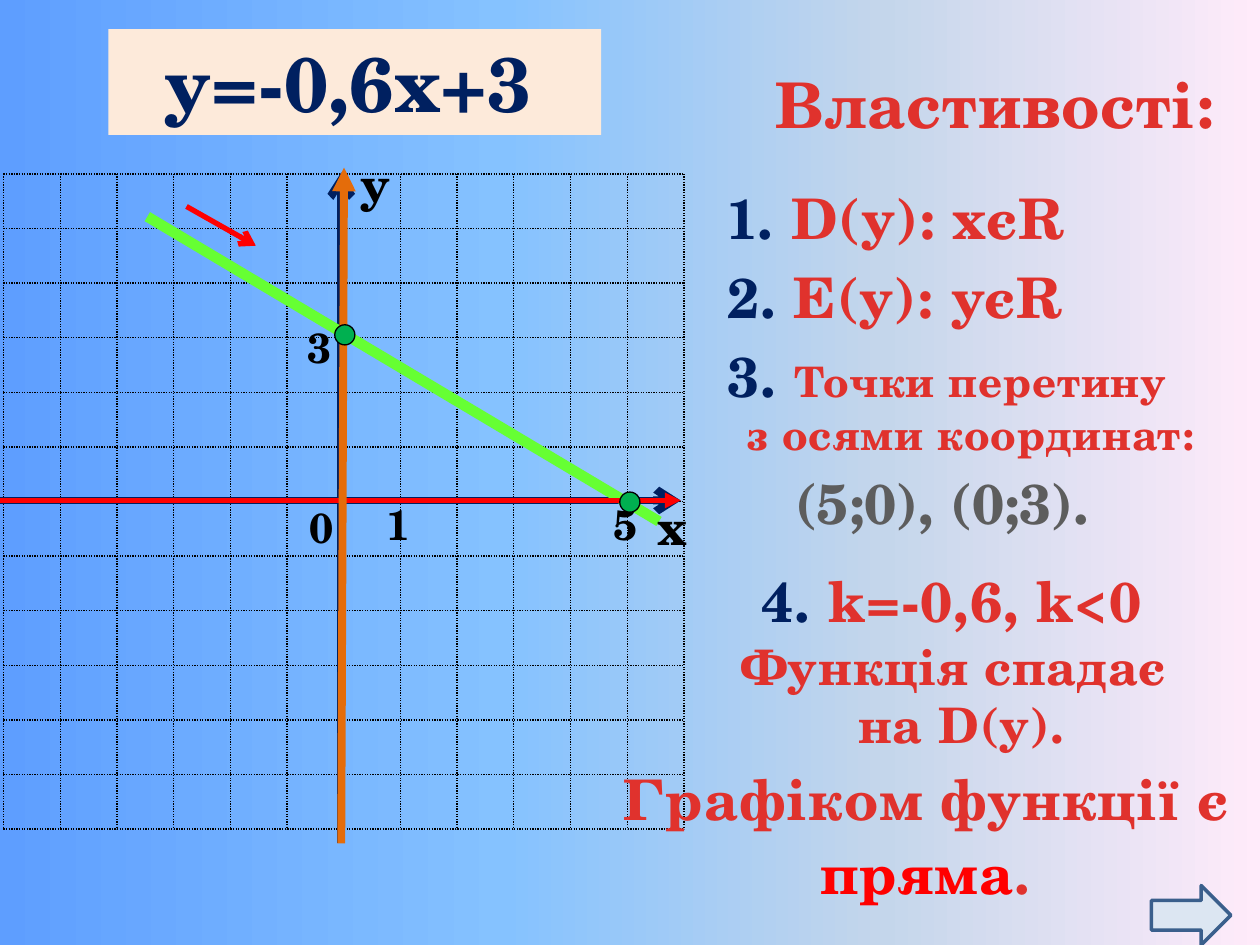
from lxml import etree
from pptx import Presentation
from pptx.dml.color import RGBColor
from pptx.enum.dml import MSO_LINE
from pptx.enum.shapes import MSO_CONNECTOR, MSO_SHAPE
from pptx.enum.text import MSO_ANCHOR, MSO_AUTO_SIZE, PP_ALIGN
from pptx.oxml.ns import qn
from pptx.util import Pt

STRAIGHT = MSO_CONNECTOR.STRAIGHT
DOT = MSO_SHAPE.FLOWCHART_CONNECTOR
RIGHT_ARROW = MSO_SHAPE.RIGHT_ARROW
TOP = MSO_ANCHOR.TOP
NO_FIT = MSO_AUTO_SIZE.NONE
LEFT, CENTER = PP_ALIGN.LEFT, PP_ALIGN.CENTER
DOTTED = MSO_LINE.ROUND_DOT

BLACK, NAVY, CRIMSON, RED, GRAY = "000000", "002060", "E0322D", "FF0000", "5D5D5D"
SKY = [(0, "5E9EFF"), (40, "85C2FF"), (70, "C4D6EB"), (100, "FFEBFA")]


def rgb(value):
    return RGBColor.from_string(value)


class Board:
    font = "TeX Gyre Schola"

    def __init__(self, prs):
        self.s = prs.slides.add_slide(prs.slide_layouts[5])

    def background(self, stops):
        fill = self.s.background.fill
        fill.gradient()
        fill.gradient_angle = 0
        gs_lst = next(self.s.element.iter(qn("a:gsLst")))
        for gs in list(gs_lst):
            gs_lst.remove(gs)
        for pos, color in stops:
            gs = etree.SubElement(gs_lst, qn("a:gs"), pos=str(pos * 1000))
            etree.SubElement(gs, qn("a:srgbClr"), val=color)

    def set_text(self, tf, paragraphs, align, wrap, indents=(), spacing=0):
        frame = dict(word_wrap=wrap, auto_size=NO_FIT, vertical_anchor=TOP,
                     margin_left=Pt(7.2), margin_right=Pt(7.2),
                     margin_top=Pt(3.6), margin_bottom=Pt(3.6))
        for name, value in frame.items():
            setattr(tf, name, value)
        for i, runs in enumerate(paragraphs):
            p = tf.add_paragraph() if i else tf.paragraphs[0]
            p.alignment = align
            if indents:
                p._p.get_or_add_pPr().set("marL", str(Pt(indents[i])))
            for text, size, color in runs:
                r = p.add_run()
                r.text = text
                style = dict(name=self.font, size=Pt(size), bold=True)
                for name, value in style.items():
                    setattr(r.font, name, value)
                r.font.color.rgb = rgb(color)
                if spacing:
                    r._r.get_or_add_rPr().set("spc", str(spacing))

    def title(self, box, text, size, color, fill, indent):
        sp = self.s.shapes.title
        for name, value in zip(("left", "top", "width", "height"), box):
            setattr(sp, name, Pt(value))
        sp.fill.solid()
        sp.fill.fore_color.rgb = rgb(fill)
        self.set_text(sp.text_frame, [[(text, size, color)]], LEFT, True, [indent])

    def text(self, box, paragraphs, align=CENTER, wrap=False, indents=(), spacing=50):
        sp = self.s.shapes.add_textbox(*map(Pt, box))
        self.set_text(sp.text_frame, paragraphs, align, wrap, indents, spacing)

    def label(self, x, y, text, size):
        self.text((x, y, 29, 36), [[(text, size, BLACK)]], LEFT, spacing=0)

    def line(self, start, end, color, width, dash=None, head=None):
        sp = self.s.shapes.add_connector(STRAIGHT, *map(Pt, start + end))
        sp.line.color.rgb = rgb(color)
        sp.line.width = Pt(width)
        if dash:
            sp.line.dash_style = dash
        spPr = sp._element.spPr
        if head:
            etree.SubElement(spPr.find(qn("a:ln")), qn("a:tailEnd"), type=head)
        etree.SubElement(spPr, qn("a:effectLst"))

    def shape(self, kind, box, fill, line, width):
        sp = self.s.shapes.add_shape(kind, *map(Pt, box))
        sp.shadow.inherit = False
        sp.fill.solid()
        sp.fill.fore_color.rgb = rgb(fill)
        sp.line.color.rgb = rgb(line)
        sp.line.width = Pt(width)


def draw_plot(b):
    left, top, dx, dy, count = 2, 99.4, 32.4, 31.2, 13
    right, bottom = left + dx * (count - 1), top + dy * (count - 1)
    for i in range(count):
        x, y = left + dx * i, top + dy * i
        b.line((x, top), (x, bottom), BLACK, 0.75, DOTTED)
        b.line((left, y), (right, y), BLACK, 0.75, DOTTED)

    x_axis = (0, 286), (389, 286)
    b.line((195, 482), (195, 98.5), NAVY, 4.5, head="arrow")
    b.line(*x_axis, NAVY, 4.5, head="arrow")
    b.line((84.2, 123.8), (376.6, 298), "66FF33", 6)
    for x, y, text, size in [(368.6, 280, "х", 28), (198.7, 84.2, "у", 28),
                             (170, 283, "0", 24), (213.8, 281.5, "1", 24),
                             (343.4, 281.5, "5", 24), (168.5, 180, "3", 24)]:
        b.label(x, y, text, size)
    b.line(*x_axis, RED, 3, head="triangle")
    b.line((195, 482), (196.6, 95.8), "E46C0A", 4.5, head="triangle")
    for x, y in [(354.2, 281.2), (191.3, 185.6)]:
        b.shape(DOT, (x, y, 11.5, 11.5), "00B050", BLACK, 0.75)
    b.line((106.6, 118), (146.2, 140.4), RED, 3, head="arrow")


def draw_properties(b):
    b.text((433.4, 33.8, 270, 51), [[("Властивості:", 36, CRIMSON)]])
    for box, number, text in [((405.4, 101.5, 212.4, 46), "1. ", "D(y): хєR"),
                              ((405.4, 146.2, 211.7, 46), "2. ", "Е(у): уєR"),
                              ((416.2, 320.4, 255.6, 46), "4. ", "k=-0,6, k<0")]:
        b.text(box, [[(number, 32, NAVY), (text, 32, CRIMSON)]])
    b.text((332, 191.5, 371.5, 75),
           [[("3. ", 32, NAVY), ("Точки перетину", 24, CRIMSON)],
            [("з осями координат:", 24, CRIMSON)]], wrap=True, indents=(47, 74))
    b.text((433.4, 264.2, 210.2, 46), [[("(5;0), (0;3).", 32, GRAY)]], spacing=0)
    b.text((416.2, 360, 257.8, 75),
           [[("Функція спадає", 28, CRIMSON)], [(" на D(y).", 28, CRIMSON)]])
    b.text((348.5, 433.4, 371.5, 90),
           [[("Графіком функції є ", 32, CRIMSON)],
            [("пряма", 32, RED), (".", 32, CRIMSON), (" ", 36, CRIMSON)]])


def main():
    prs = Presentation()
    prs.slide_width, prs.slide_height = Pt(720), Pt(540)
    b = Board(prs)
    b.background(SKY)
    b.title((62, 16.6, 281.5, 60.5), "у=-0,6х+3", 44, NAVY, "FDEADA", 25)
    draw_plot(b)
    draw_properties(b)
    b.shape(RIGHT_ARROW, (658, 506, 45.4, 34), "DCE6F2", "3A5F8C", 2)
    prs.save("out.pptx")


if __name__ == "__main__":
    main()
